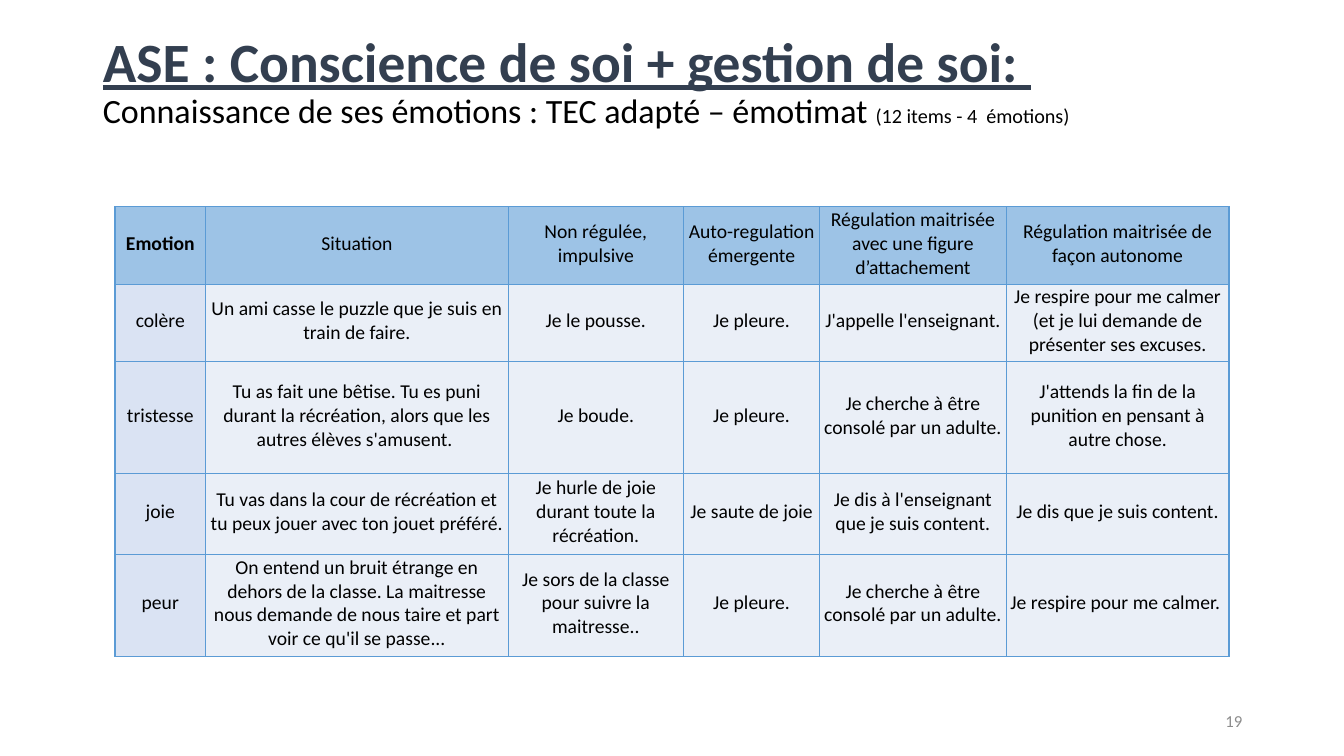
"""Build the slide on emotional self-awareness and self-regulation."""
import pptx
import pptx.dml.color
import pptx.enum.text
import pptx.oxml
import pptx.oxml.ns
import pptx.util

Inches = pptx.util.Inches
Pt = pptx.util.Pt
RGBColor = pptx.dml.color.RGBColor
MIDDLE = pptx.enum.text.MSO_ANCHOR.MIDDLE
ALIGN = pptx.enum.text.PP_ALIGN

FONT = "Calibri"
NAVY = RGBColor(0x33, 0x3F, 0x50)
BLACK = RGBColor(0, 0, 0)
GREY = RGBColor(0x8C, 0x8C, 0x8C)
HEADER_BLUE = RGBColor(0x9D, 0xC3, 0xE6)
EMOTION_BLUE = RGBColor(0xDA, 0xE3, 0xF3)
ANSWER_BLUE = RGBColor(0xEA, 0xEF, 0xF7)
BORDER_BLUE = RGBColor(0x5B, 0x9B, 0xD5)

HEADING = "ASE : Conscience de soi + gestion de soi: "
SUBTITLE = "Connaissance de ses émotions : TEC adapté – émotimat "
DETAIL = "(12 items - 4  émotions)"
PAGE = "19"

EMOTIONS = [
    ("Emotion", "Situation", "Non régulée, impulsive", "Auto-regulation émergente",
     "Régulation maitrisée avec une figure d’attachement",
     "Régulation maitrisée de façon autonome"),
    ("colère", "Un ami casse le puzzle que je suis en train de faire.",
     "Je le pousse.", "Je pleure.", "J'appelle l'enseignant.",
     "Je respire pour me calmer (et je lui demande de présenter ses excuses."),
    ("tristesse",
     "Tu as fait une bêtise. Tu es puni durant la récréation, "
     "alors que les autres élèves s'amusent. ",
     "Je boude.", "Je pleure.", "Je cherche à être consolé par un adulte.",
     "J'attends la fin de la punition en pensant à autre chose."),
    ("joie",
     "Tu vas dans la cour de récréation et tu peux jouer avec ton jouet préféré.",
     "Je hurle de joie durant toute la récréation.", "Je saute de joie",
     "Je dis à l'enseignant que je suis content.", "Je dis que je suis content."),
    ("peur",
     "On entend un bruit étrange en dehors de la classe. La maitresse nous "
     "demande de nous taire et part voir ce qu'il se passe...",
     "Je sors de la classe pour suivre la maitresse..", "Je pleure.",
     "Je cherche à être consolé par un adulte.", "Je respire pour me calmer. "),
]
COLUMN_WIDTHS = (0.9, 3, 1.74, 1.35, 1.85, 2.21)
ROW_HEIGHTS = (0.77, 0.77, 1.11, 0.8, 1.01)


def style(font, size, color, bold=False):
    """Set typeface, size, colour and weight."""
    font.name = FONT
    font.size = Pt(size)
    font.color.rgb = color
    font.bold = bold


def add_title(slide):
    """Fill the title with its underlined heading and subtitle."""
    title = slide.shapes.title
    title.left, title.top = Inches(0.92), Inches(0.4)
    title.width, title.height = Inches(11.5), Inches(1.45)
    frame = title.text_frame
    frame.auto_size = pptx.enum.text.MSO_AUTO_SIZE.NONE
    frame.word_wrap = True
    frame.vertical_anchor = MIDDLE
    frame.margin_bottom = Inches(0.66)
    paragraph = frame.paragraphs[0]
    paragraph.alignment = ALIGN.LEFT
    paragraph.line_spacing = 0.9
    heading = paragraph.add_run()
    heading.text = HEADING
    style(heading.font, 39.6, NAVY, True)
    heading.font.underline = True
    paragraph.add_line_break()
    for words, size in ((SUBTITLE, 24.3), (DETAIL, 14.4)):
        run = paragraph.add_run()
        run.text = words
        style(run.font, size, BLACK)


def add_borders(cell):
    """Outline the four sides of a table cell."""
    properties = cell._tc.get_or_add_tcPr()
    for position, side in enumerate(("lnL", "lnR", "lnT", "lnB")):
        properties.insert(position, pptx.oxml.parse_xml(
            f'<a:{side} {pptx.oxml.ns.nsdecls("a")} w="{Pt(1)}"><a:solidFill>'
            f'<a:srgbClr val="{BORDER_BLUE}"/></a:solidFill></a:{side}>'))


def add_emotions(slide):
    """Add the table of emotions and reactions."""
    table = slide.shapes.add_table(
        len(ROW_HEIGHTS), len(COLUMN_WIDTHS), Inches(1.14), Inches(2.05),
        Inches(sum(COLUMN_WIDTHS)), Inches(sum(ROW_HEIGHTS))).table
    table.horz_banding = False
    table.first_row = False
    for column, width in zip(table.columns, COLUMN_WIDTHS):
        column.width = Inches(width)
    for row, height in zip(table.rows, ROW_HEIGHTS):
        row.height = Inches(height)
    for r, reactions in enumerate(EMOTIONS):
        for c, words in enumerate(reactions):
            cell = table.cell(r, c)
            cell.text = words
            cell.vertical_anchor = MIDDLE
            cell.margin_left = cell.margin_right = cell.margin_top = Inches(0.01)
            cell.margin_bottom = Inches(0.05)
            cell.fill.solid()
            cell.fill.fore_color.rgb = (
                HEADER_BLUE if r == 0 else EMOTION_BLUE if c == 0 else ANSWER_BLUE)
            add_borders(cell)
            paragraph = cell.text_frame.paragraphs[0]
            paragraph.alignment = ALIGN.CENTER
            style(paragraph.font, 14, BLACK, r == c == 0)


def add_page_number(slide):
    """Add the page number at the lower right."""
    frame = slide.shapes.add_textbox(
        Inches(9.42), Inches(6.95), Inches(3), Inches(0.4)).text_frame
    frame.word_wrap = True
    frame.vertical_anchor = MIDDLE
    frame.text = PAGE
    paragraph = frame.paragraphs[0]
    paragraph.alignment = ALIGN.RIGHT
    style(paragraph.font, 12, GREY)


def main():
    """Build and save the presentation."""
    deck = pptx.Presentation()
    deck.slide_width, deck.slide_height = Inches(13.33), Inches(7.5)
    slide = deck.slides.add_slide(deck.slide_layouts[5])
    add_title(slide)
    add_emotions(slide)
    add_page_number(slide)
    deck.save("out.pptx")


if __name__ == "__main__":
    main()
